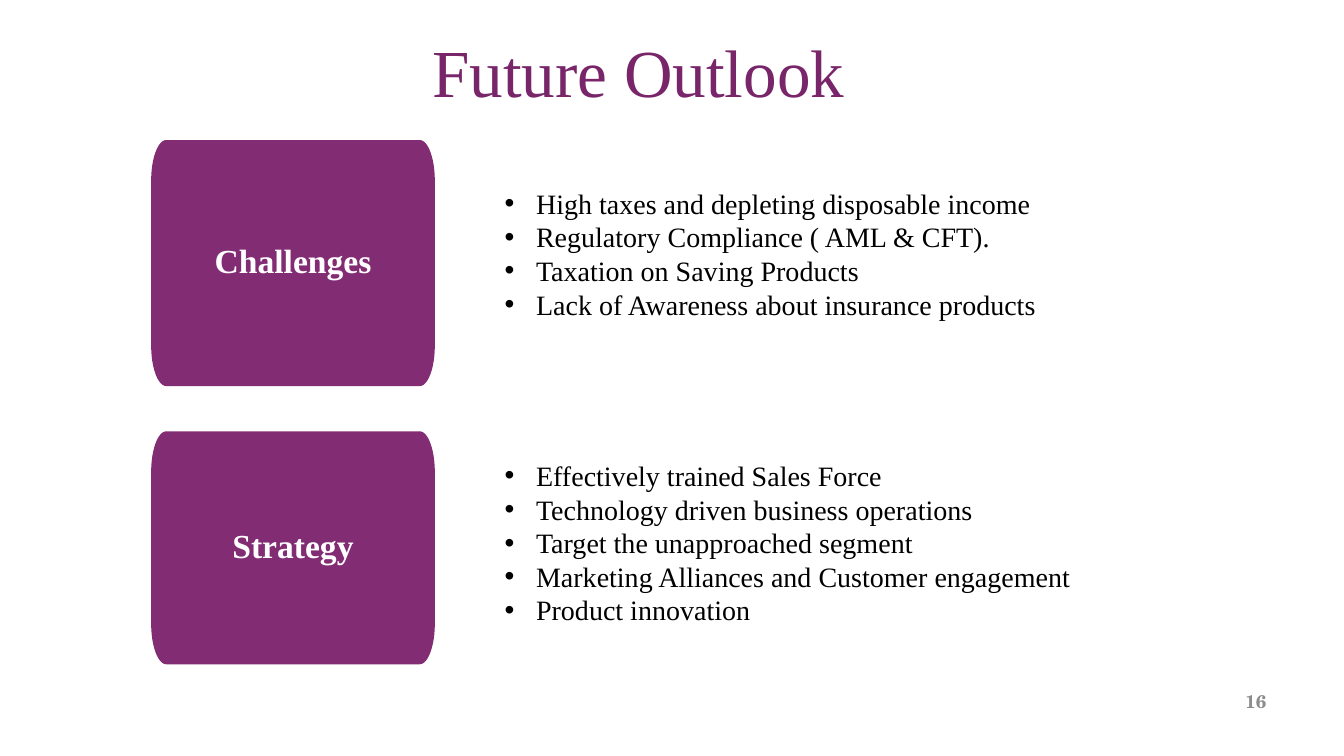
import math

from lxml import etree
from pptx import Presentation
from pptx.dml.color import RGBColor
from pptx.enum import text as t
from pptx.oxml import ns
from pptx.util import Cm, Pt

HUES = {"title": "782569", "card": "822C74", "label": "FFFFFF",
        "body": "000000", "page": "8C8C8C"}
SERIF = "Times New Roman"
LEFT, WIDE = 3.81, 7.15  # cards, in cm
RX, RY = 0.38, 1.03  # corner radii of a card

CARDS = [
    ("Challenges", 3.53, 6.2, 4.57, 16.51, 4.45, [
        "High taxes and depleting disposable income",
        "Regulatory Compliance ( AML & CFT).",
        "Taxation on Saving Products",
        "Lack of Awareness about insurance products"]),
    ("Strategy", 10.87, 5.87, 11.43, 17.15, 4.52, [
        "Effectively trained Sales Force",
        "Technology driven business operations",
        "Target the unapproached segment",
        "Marketing Alliances and Customer engagement",
        "Product innovation"]),
]


def write(para, words, hue, size, face=SERIF, bold=False):
    run = para.add_run()
    run.text = words
    for key, val in {"name": face, "size": Pt(size), "bold": bold}.items():
        setattr(run.font, key, val)
    run.font.color.rgb = RGBColor.from_string(HUES[hue])


def add_box(left, top, wide, high, anchor):
    """Add a wrapping text box, in cm, and return its frame."""
    box = slide.shapes.add_textbox(Cm(left), Cm(top), Cm(wide), Cm(high))
    box.text_frame.word_wrap = True
    box.text_frame.vertical_anchor = anchor
    return box.text_frame


deck = Presentation()
deck.slide_width, deck.slide_height = Cm(33.87), Cm(19.05)
slide = deck.slides.add_slide(deck.slide_layouts[6])

# Title and page number
for words, spot, align, style in [
    ("Future Outlook", (5.08, 0.94, 22.02, 1.7), t.PP_ALIGN.CENTER,
     ("title", 48)),
    ("16", (24.26, 17.15, 7.9, 1.02), t.PP_ALIGN.RIGHT,
     ("page", 13, "TeX Gyre Schola", True)),
]:
    para = add_box(*spot, t.MSO_ANCHOR.MIDDLE).paragraphs[0]
    para.alignment = align
    write(para, words, *style)

for name, top, high, y, wide, tall, items in CARDS:
    # Card with elliptical corners, clockwise from the left edge
    dots = []
    for turn, (x_mid, y_mid) in enumerate([
        (LEFT + RX, top + RY), (LEFT + WIDE - RX, top + RY),
        (LEFT + WIDE - RX, top + high - RY), (LEFT + RX, top + high - RY),
    ]):
        for step in range(13):
            ang = math.radians(180 + 90 * turn + 7.5 * step)
            dots.append((Cm(x_mid + RX * math.cos(ang)),
                         Cm(y_mid + RY * math.sin(ang))))
    path = slide.shapes.build_freeform(*dots[0])
    path.add_line_segments(dots[1:], close=True)
    card = path.convert_to_shape()
    card.shadow.inherit = False
    card.fill.solid()
    card.fill.fore_color.rgb = RGBColor.from_string(HUES["card"])
    card.line.fill.background()
    frame = card.text_frame
    for key, val in {"margin_left": Cm(0.56), "margin_right": Cm(0.56),
                     "margin_top": Cm(0.36), "margin_bottom": Cm(0.36),
                     "word_wrap": True,
                     "vertical_anchor": t.MSO_ANCHOR.MIDDLE}.items():
        setattr(frame, key, val)
    para = frame.paragraphs[0]
    para.alignment = t.PP_ALIGN.CENTER
    para.line_spacing = 0.9
    write(para, name, "label", 24, bold=True)

    # Bulleted list beside the card
    frame = add_box(11.2, y, wide, tall, t.MSO_ANCHOR.TOP)
    for num, item in enumerate(items):
        para = frame.add_paragraph() if num else frame.paragraphs[0]
        para.level = 1
        props = para._p.get_or_add_pPr()
        props.set("marL", str(Cm(2.06)))
        props.set("indent", str(Cm(-0.79)))
        etree.SubElement(props, ns.qn("a:buFont")).set("typeface", "Arial")
        etree.SubElement(props, ns.qn("a:buChar")).set("char", "•")
        write(para, item, "body", 20)

deck.save("out.pptx")
